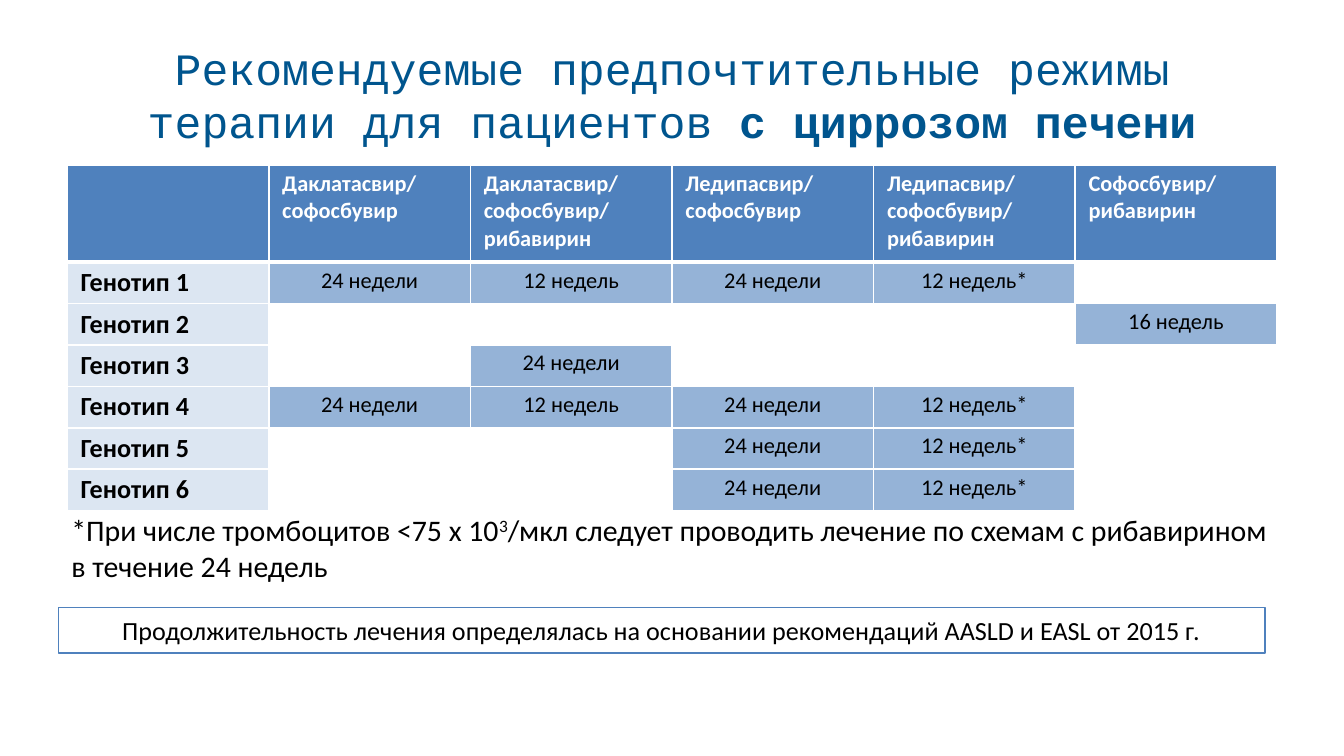
from collections import namedtuple
from dataclasses import dataclass
from lxml.etree import SubElement as Sub
from pptx import Presentation as Deck
from pptx.dml.color import RGBColor as RGB
from pptx.enum.shapes import MSO_SHAPE as Form
from pptx.enum.text import MSO_ANCHOR as Anchor, PP_ALIGN as Align
from pptx.oxml.ns import qn
from pptx.util import Emu, Inches, Pt

Box = namedtuple("Box", "x y w h")


@dataclass(frozen=True)
class Theme:
    """Colours, fonts and type sizes of the slide."""
    navy: str = "00558E"
    blue: str = "4F81BD"
    mid: str = "95B3D7"
    pale: str = "DCE6F2"
    white: str = "FFFFFF"
    black: str = "000000"
    mono: str = "Courier New"
    sans: str = "Calibri"
    title: int = 24
    note: int = 16
    label: int = 14
    small: int = 12


T = Theme()
HEADS = [
    "", "Даклатасвир/ софосбувир", "Даклатасвир/\nсофосбувир/\nрибавирин",
    "Ледипасвир/\nсофосбувир", "Ледипасвир/\nсофосбувир/\nрибавирин",
    "Софосбувир/\nрибавирин",
]
LONG, SHORT, STAR = "24 недели", "12 недель", "12 недель*"
TERMS = [
    {1: LONG, 2: SHORT, 3: LONG, 4: STAR},
    {5: "16 недель"},
    {2: LONG},
    {1: LONG, 2: SHORT, 3: LONG, 4: STAR},
    {3: LONG, 4: STAR},
    {3: LONG, 4: STAR},
]


def scale(deck, x, y, w, h):
    """Turn percentages of the slide into a box of lengths."""
    wide, high = deck.slide_width / 100, deck.slide_height / 100
    return Box(Emu(int(x * wide)), Emu(int(y * high)), Emu(int(w * wide)), Emu(int(h * high)))


def put(item, values):
    """Set the attributes named in a dict."""
    for key, value in values.items():
        setattr(item, key, value)


def style(size, tint, name=T.sans, bold=False):
    """Return the format values of a font."""
    return {"size": Pt(size), "name": name, "bold": bold, "tint": tint}


def write(para, text, look):
    """Add a formatted run to a paragraph."""
    run = para.add_run()
    run.text = text
    put(run.font, {k: v for k, v in look.items() if k != "tint"})
    run.font.color.rgb = RGB.from_string(look["tint"])
    return run


def edge(cell, first):
    """Draw white cell borders, thick between head and body."""
    props = cell._tc.get_or_add_tcPr()
    for side in "LRTB":
        thick = (side == "B" and first == 0) or (side == "T" and first == 1)
        line = Sub(props, qn(f"a:ln{side}"), w=str(Pt(3 if thick else 1)))
        Sub(Sub(line, qn("a:solidFill")), qn("a:srgbClr"), val=T.white)


def fill(cell, row, text, tint, look, align):
    """Give one cell its borders, fill and text."""
    edge(cell, row)
    put(cell, {"margin_left": Inches(0.1), "margin_right": Inches(0.1),
               "margin_top": Pt(2.6), "margin_bottom": Pt(2.6)})
    if tint:
        cell.fill.solid()
        cell.fill.fore_color.rgb = RGB.from_string(tint)
    else:
        cell.fill.background()
    frame = cell.text_frame
    for n, part in enumerate(text.split("\n")):
        para = frame.add_paragraph() if n else frame.paragraphs[0]
        para.alignment = align
        if part:
            write(para, part, look)
        else:
            Sub(para._p, qn("a:endParaRPr"), sz=str(T.small * 100))


def title(slide, box):
    """Place the centred heading."""
    frame = slide.shapes.add_textbox(*box).text_frame
    put(frame, {"word_wrap": True, "vertical_anchor": Anchor.MIDDLE})
    para = frame.paragraphs[0]
    para.alignment = Align.CENTER
    write(para, "Рекомендуемые предпочтительные режимы терапии для пациентов ",
          style(T.title, T.navy, T.mono))
    write(para, "с циррозом печени", style(T.title, T.navy, T.mono, True))


def chart(slide, box):
    """Place the table of treatment terms by genotype."""
    table = slide.shapes.add_table(len(TERMS) + 1, len(HEADS), *box).table
    top = int(box.h * 0.28)
    for n, row in enumerate(table.rows):
        row.height = (box.h - top) // len(TERMS) if n else top
    for col, text in enumerate(HEADS):
        fill(table.cell(0, col), 0, text, T.blue,
             style(T.small, T.white, bold=True), Align.LEFT)
    for row, terms in enumerate(TERMS, 1):
        fill(table.cell(row, 0), row, f"Генотип {row}", T.pale,
             style(T.label, T.black, bold=True), Align.LEFT)
        for col in range(1, len(HEADS)):
            text = terms.get(col, "")
            fill(table.cell(row, col), row, text, T.mid if text else None,
                 style(T.small, T.black), Align.CENTER)


def note(slide, box):
    """Place the footnote under the table."""
    frame = slide.shapes.add_textbox(*box).text_frame
    frame.word_wrap = True
    para, look = frame.paragraphs[0], style(T.note, T.black)
    write(para, "*При числе тромбоцитов <75 x 10", look)
    power = write(para, "3", look)
    power._r.get_or_add_rPr().set("baseline", "30000")
    write(para, "/мкл следует проводить лечение по схемам с рибавирином в течение 24 недель", look)


def source(slide, box):
    """Place the outlined line on guidelines."""
    shape = slide.shapes.add_shape(Form.RECTANGLE, *box)
    shape.shadow.inherit = False
    shape.fill.background()
    shape.line.color.rgb = RGB.from_string(T.blue)
    shape.line.width = Pt(0.75)
    shape.text_frame.word_wrap = True
    para = shape.text_frame.paragraphs[0]
    para.alignment = Align.CENTER
    write(para, "Продолжительность лечения определялась на основании рекомендаций "
          "AASLD и EASL от 2015 г.", style(T.label, T.black))


def main():
    """Build the slide and save it."""
    deck = Deck()
    wide = Inches(10)
    put(deck, {"slide_width": wide, "slide_height": Emu(wide * 9 // 16)})
    slide = deck.slides.add_slide(deck.slide_layouts[6])
    title(slide, scale(deck, 5, 4.09, 90, 16.71))
    note(slide, scale(deck, 4.33, 66.84, 91.3, 11.38))
    chart(slide, scale(deck, 5, 21.87, 90, 45.69))
    source(slide, scale(deck, 4.33, 80.36, 89.8, 6.04))
    deck.save("out.pptx")


if __name__ == "__main__":
    main()
